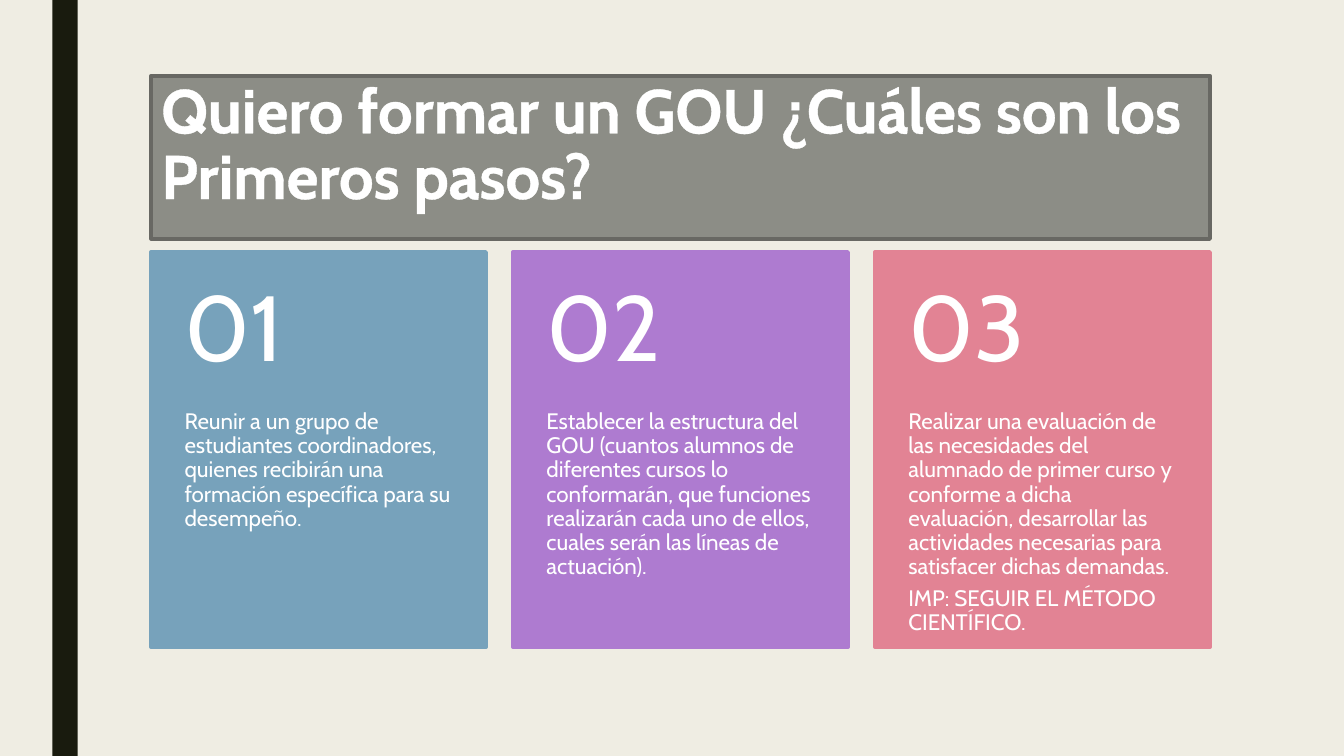
from lxml import etree
from pptx import Presentation
from pptx import util as u
from pptx.dml.color import RGBColor
from pptx.enum import shapes, text
from pptx.oxml.ns import qn

COLORS = {
    "background": "EFEDE3",
    "bar": "191B0E",
    "banner": "8C8D86",
    "banner_edge": "686863",
    "blue": "77A2BB",
    "purple": "AE7BD0",
    "pink": "E28394",
    "white": "FFFFFF",
}

STEPS = [
    ("blue", ["Reunir a un grupo de estudiantes coordinadores, quienes recibirán "
              "una formación específica para su desempeño."]),
    ("purple", ["Establecer la estructura del GOU (cuantos alumnos de diferentes "
                "cursos lo conformarán, que funciones realizarán cada uno de ellos, "
                "cuales serán las líneas de actuación)."]),
    ("pink", ["Realizar una evaluación de las necesidades del alumnado de primer "
              "curso y conforme a dicha evaluación, desarrollar las actividades "
              "necesarias para satisfacer dichas demandas.",
              "IMP: SEGUIR EL MÉTODO CIENTÍFICO."]),
]

CARD_LEFT, CARD_TOP = 1.5, 2.5
CARD_WIDTH, CARD_HEIGHT = 3.32, 3.92
CARD_STEP = 3.59
NUMBER_HEIGHT = 1.57


def rgb(name):
    return RGBColor.from_string(COLORS[name])


def write(frame, paragraphs, size, font="Cabin", color="white", bold=False,
          spacing=0.9, after=0.35, anchor=text.MSO_ANCHOR.TOP, insets=None, outline=None):
    frame.word_wrap = True
    frame.auto_size = text.MSO_AUTO_SIZE.NONE
    frame.vertical_anchor = anchor
    if insets:
        frame.margin_left, frame.margin_top, frame.margin_right, frame.margin_bottom = map(u.Inches, insets)
    for index, wording in enumerate(paragraphs):
        paragraph = frame.paragraphs[0] if index == 0 else frame.add_paragraph()
        paragraph.alignment = text.PP_ALIGN.LEFT
        paragraph.line_spacing = spacing
        paragraph.space_before = u.Pt(0)
        paragraph.space_after = u.Pt(size * after)
        run = paragraph.add_run()
        run.text = wording
        run.font.name = font
        run.font.size = u.Pt(size)
        run.font.bold = bold
        run.font.color.rgb = rgb(color)
        if outline:
            edge = etree.Element(qn("a:ln"), w=str(u.Pt(outline)))
            fill = etree.SubElement(edge, qn("a:solidFill"))
            etree.SubElement(fill, qn("a:srgbClr"), val=COLORS[color])
            run.font._element.insert(0, edge)


class StepsSlide:
    line_width = u.Pt(2.75)

    def __init__(self, presentation):
        self.slide = presentation.slides.add_slide(presentation.slide_layouts[5])
        background = self.slide.background.fill
        background.solid()
        background.fore_color.rgb = rgb("background")

    def paint(self, shape, fill, line=None):
        shape.fill.solid()
        shape.fill.fore_color.rgb = rgb(fill)
        if line:
            shape.line.color.rgb = rgb(line)
            shape.line.width = self.line_width
        else:
            shape.line.fill.background()

    def rectangle(self, parent, place, fill, line=None):
        shape = parent.add_shape(shapes.MSO_SHAPE.RECTANGLE, *map(u.Inches, place))
        shape.shadow.inherit = False
        self.paint(shape, fill, line)

    def label(self, parent, place, paragraphs, **style):
        box = parent.add_textbox(*map(u.Inches, place))
        write(box.text_frame, paragraphs, **style)

    def bar(self):
        self.rectangle(self.slide.shapes, (0.52, 0, 0.25, 7.5), "bar")

    def title(self, wording):
        heading = self.slide.shapes.title
        heading.left, heading.top, heading.width, heading.height = map(u.Inches, (1.5, 0.75, 10.5, 1.62))
        self.paint(heading, "banner", "banner_edge")
        write(heading.text_frame, [wording], size=44, bold=True, spacing=0.89, after=0, outline=0.8)

    def card(self, index, color, paragraphs):
        left = CARD_LEFT + index * CARD_STEP
        group = self.slide.shapes.add_group_shape().shapes
        self.rectangle(group, (left, CARD_TOP, CARD_WIDTH, CARD_HEIGHT), color, color)
        self.label(group, (left, CARD_TOP + NUMBER_HEIGHT, CARD_WIDTH, CARD_HEIGHT - NUMBER_HEIGHT),
                   paragraphs, size=16, insets=(0.33, 0, 0.33, 0.36))
        self.label(group, (left, CARD_TOP, CARD_WIDTH, NUMBER_HEIGHT), [f"{index + 1:02}"],
                   size=66, anchor=text.MSO_ANCHOR.MIDDLE, insets=(0.33, 0.18, 0.33, 0.18))


def main():
    presentation = Presentation()
    presentation.slide_width, presentation.slide_height = u.Inches(13.33), u.Inches(7.5)
    page = StepsSlide(presentation)
    page.bar()
    page.title("Quiero formar un GOU ¿Cuáles son los Primeros pasos?")
    for index, (color, paragraphs) in enumerate(STEPS):
        page.card(index, color, paragraphs)
    presentation.save("out.pptx")


if __name__ == "__main__":
    main()
